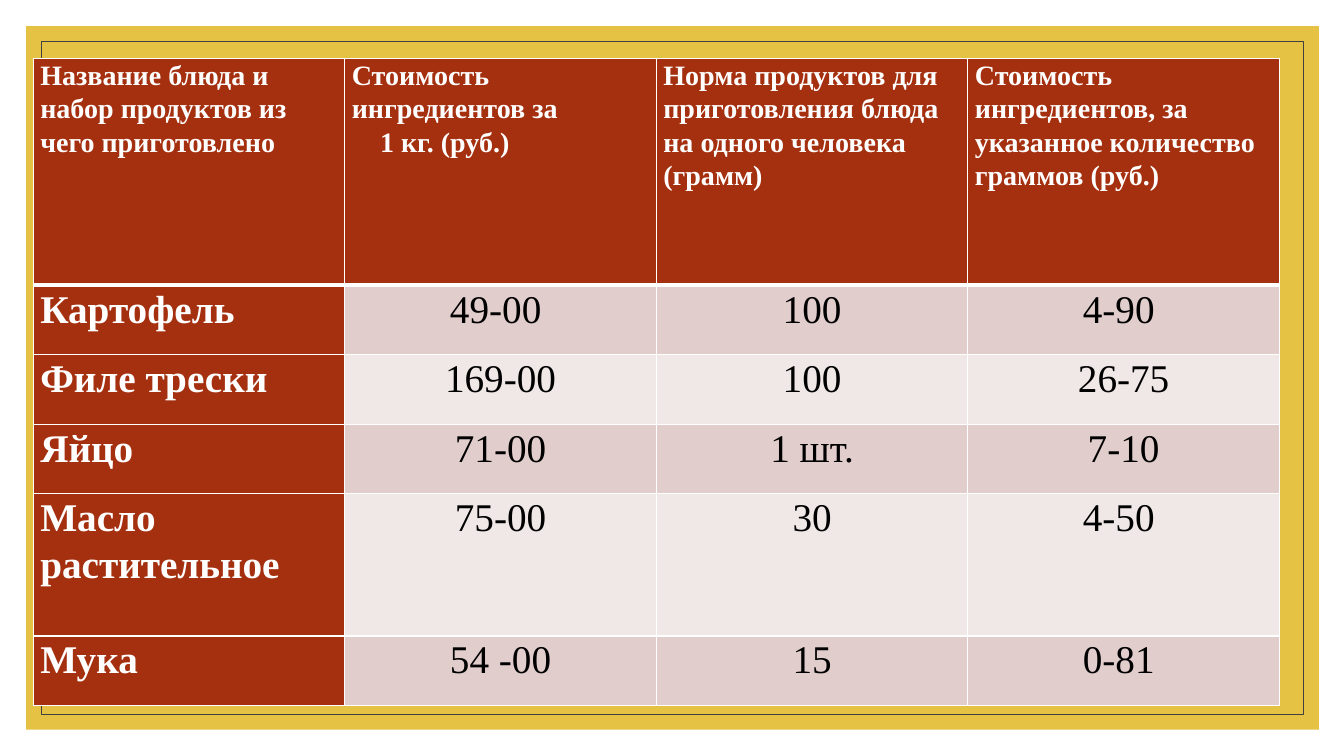
"""Builds a slide with a table of dish ingredients and their cost."""
from lxml import etree
from pptx import Presentation
from pptx import util as u
from pptx.dml.color import RGBColor
from pptx.enum import shapes, text
from pptx.oxml.ns import qn

HEADER = [
    "Название блюда и набор продуктов из чего приготовлено",
    "Стоимость ингредиентов за\n1 кг. (руб.)",
    "Норма продуктов для приготовления блюда на одного человека (грамм)",
    "Стоимость ингредиентов, за указанное количество граммов (руб.)",
]
INGREDIENTS = [
    ("Картофель", "49-00 ", "100", "4-90 "),
    ("Филе трески", "169-00", "100", "26-75"),
    ("Яйцо", "71-00", "1 шт.", "7-10"),
    ("Масло растительное", "75-00", "30", "4-50 "),
    ("Мука", "54 -00", "15", "0-81 "),
]
ROW_HEIGHTS = [2.25, 0.69, 0.69, 0.69, 1.41, 0.69]
COL_WIDTH = 3.09
FONT = "Times New Roman"

GOLD = RGBColor(0xE5, 0xC2, 0x43)
GRAY = RGBColor(0x40, 0x40, 0x40)
RED = RGBColor(0xA5, 0x30, 0x0F)
BANDS = [RGBColor(0xF0, 0xE8, 0xE7), RGBColor(0xE1, 0xCD, 0xCC)]
WHITE = RGBColor(0xFF, 0xFF, 0xFF)
BLACK = RGBColor(0, 0, 0)


def add_frame(s, left, top, width, height):
    sp = s.shapes.add_shape(shapes.MSO_SHAPE.RECTANGLE, u.Inches(left),
                            u.Inches(top), u.Inches(width), u.Inches(height))
    sp.shadow.inherit = False
    return sp


def set_borders(cell, widths):
    tcPr = cell._tc.get_or_add_tcPr()
    for i, (side, width) in enumerate(widths.items()):
        ln = etree.Element(qn(f"a:ln{side}"), w=str(u.Pt(width)))
        fill = etree.SubElement(ln, qn("a:solidFill"))
        etree.SubElement(fill, qn("a:srgbClr"), val=str(WHITE))
        tcPr.insert(i, ln)


def fill_cell(cell, value, row, col):
    heading = row == 0 or col == 0
    cell.margin_left = cell.margin_right = u.Inches(0.07)
    cell.margin_top = cell.margin_bottom = 0
    cell.fill.solid()
    cell.fill.fore_color.rgb = RED if heading else BANDS[row % 2]
    set_borders(cell, {"L": 1, "R": 1, "T": 3 if row == 1 else 1,
                       "B": 3 if row == 0 else 1})
    cell.text_frame.text = value
    for i, p in enumerate(cell.text_frame.paragraphs):
        p.line_spacing = 1.07
        p.alignment = text.PP_ALIGN.LEFT if heading else text.PP_ALIGN.CENTER
        if i:
            p._p.get_or_add_pPr().set("marL", str(u.Inches(0.28)))
        for r in p.runs:
            r.font.name = FONT
            r.font.size = u.Pt(20 if row == 0 else 28)
            r.font.bold = heading
            r.font.color.rgb = WHITE if heading else BLACK


def main():
    prs = Presentation()
    prs.slide_width, prs.slide_height = u.Inches(13.33), u.Inches(7.5)
    s = prs.slides.add_slide(prs.slide_layouts[6])

    panel = add_frame(s, 0.26, 0.26, 12.82, 6.98)
    panel.fill.solid()
    panel.fill.fore_color.rgb = GOLD
    panel.line.fill.background()

    outline = add_frame(s, 0.41, 0.41, 12.52, 6.68)
    outline.fill.background()
    outline.line.color.rgb = GRAY
    outline.line.width = u.Pt(0.5)

    rows = [HEADER, *INGREDIENTS]
    table = s.shapes.add_table(
        len(rows), len(HEADER), u.Inches(0.33), u.Inches(0.58),
        u.Inches(COL_WIDTH * len(HEADER)), u.Inches(sum(ROW_HEIGHTS))).table
    table.first_col = True
    for column in table.columns:
        column.width = u.Inches(COL_WIDTH)
    for i, (values, height) in enumerate(zip(rows, ROW_HEIGHTS)):
        table.rows[i].height = u.Inches(height)
        for j, value in enumerate(values):
            fill_cell(table.cell(i, j), value, i, j)

    prs.save("out.pptx")


if __name__ == "__main__":
    main()
